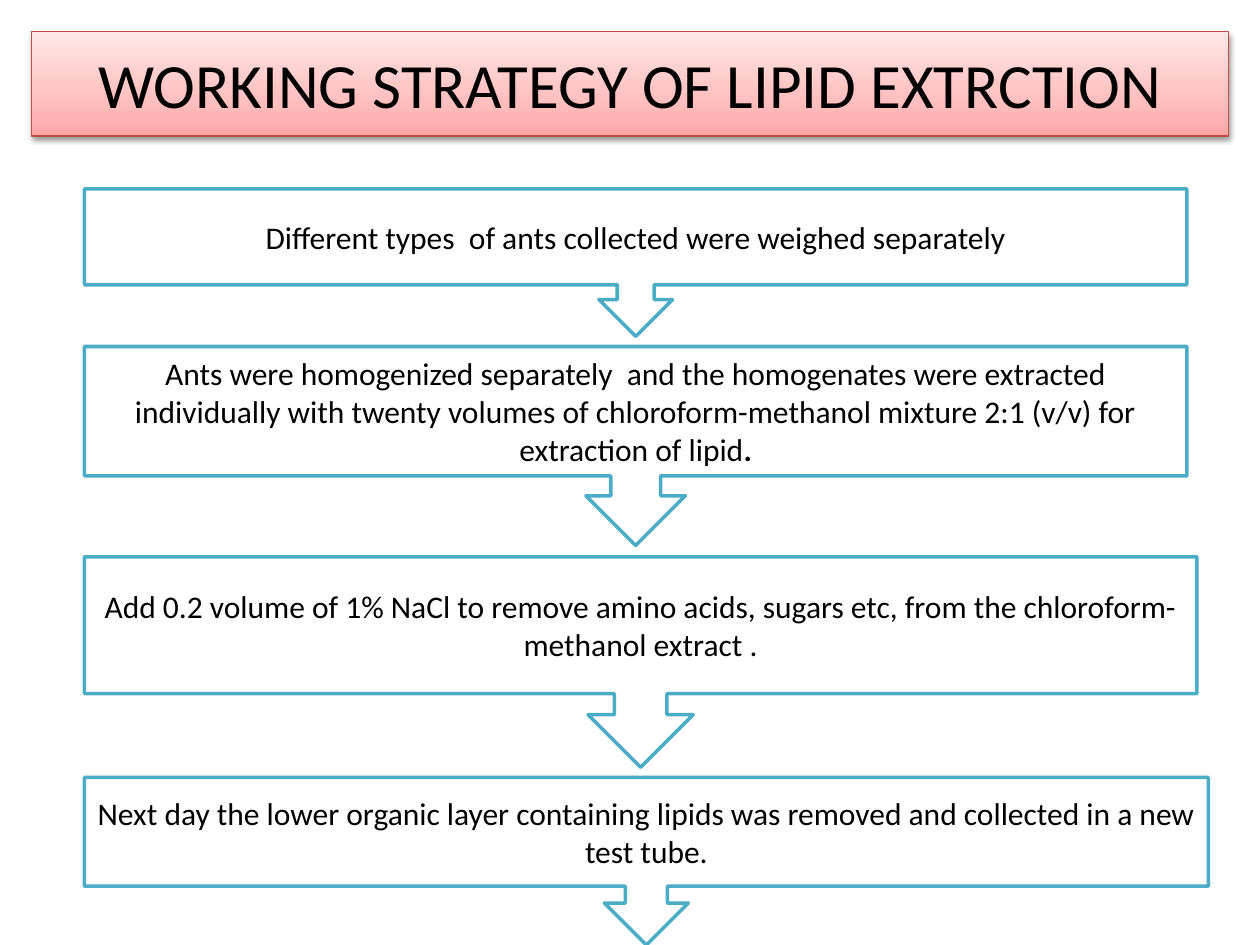
from lxml import etree
from pptx import Presentation
from pptx.dml.color import RGBColor
from pptx.enum import shapes, text
from pptx.oxml import ns
from pptx.util import Inches, Pt

COLORS = {
    "text": "000000", "box": "FFFFFF", "box_line": "4BACC6",
    "title_line": "BF4C48", "shadow": "000000",
    "title_bottom": "FFA6A5", "title_middle": "FFC0BF", "title_top": "FFE7E7",
}


def color(name):
    return RGBColor.from_string(COLORS[name])


def write_text(shape, runs, size):
    """Fill a shape with one centred paragraph of (words, bold) runs."""
    frame = shape.text_frame
    frame_format = {
        "word_wrap": True,
        "auto_size": text.MSO_AUTO_SIZE.NONE,
        "vertical_anchor": text.MSO_ANCHOR.MIDDLE,
    }
    for name, value in frame_format.items():
        setattr(frame, name, value)
    paragraph = frame.paragraphs[0]
    paragraph.alignment = text.PP_ALIGN.CENTER
    for words, bold in runs:
        run = paragraph.add_run()
        run.text = words
        for name, value in {"name": "Calibri", "size": Pt(size), "bold": bold}.items():
            setattr(run.font, name, value)
        run.font.color.rgb = color("text")


presentation = Presentation()
presentation.slide_width, presentation.slide_height = Inches(10), Inches(7.5)
slide = presentation.slides.add_slide(presentation.slide_layouts[5])

# Title banner
title = slide.shapes.title
position = {"left": 0.25, "top": 0.25, "width": 9.5, "height": 0.83}
for name, value in position.items():
    setattr(title, name, Inches(value))
write_text(title, [("WORKING STRATEGY OF LIPID EXTRCTION", False)], 36)
title.line.color.rgb = color("title_line")
title.line.width = Pt(0.75)

# Three-stop gradient running upwards, and a soft shadow below the banner
stops = "".join(
    f'<a:gs pos="{percent * 1000}"><a:srgbClr val="{COLORS[name]}"/></a:gs>'
    for percent, name in [(0, "title_bottom"), (35, "title_middle"), (100, "title_top")]
)
gradient = etree.fromstring(
    f'<a:gradFill {ns.nsdecls("a")} rotWithShape="1"><a:gsLst>{stops}</a:gsLst>'
    '<a:lin ang="16200000" scaled="0"/></a:gradFill>'
)
effects = etree.fromstring(
    f'<a:effectLst {ns.nsdecls("a")}>'
    f'<a:outerShdw blurRad="{Pt(3.1)}" dist="{Pt(1.6)}" dir="5400000" rotWithShape="0">'
    f'<a:srgbClr val="{COLORS["shadow"]}"><a:alpha val="38000"/></a:srgbClr>'
    "</a:outerShdw></a:effectLst>"
)
outline = title.element.spPr.find(ns.qn("a:ln"))
outline.addprevious(gradient)
outline.addnext(effects)

# Steps of the extraction: top, width, height, runs
steps = [
    (1.5, 8.75, 1.17, [
        ("Different types  of ants collected were weighed separately", False)]),
    (2.75, 8.75, 1.58, [
        ("Ants were homogenized separately  and the homogenates were extracted "
         "individually with twenty volumes of chloroform-methanol mixture 2:1 (v/v) "
         "for extraction of lipid", False),
        (".", True)]),
    (4.42, 8.83, 1.67, [
        ("Add 0.2 volume of 1% NaCl to remove amino acids, sugars etc, from the "
         "chloroform-methanol extract .", False)]),
    (6.17, 8.92, 1.33, [
        ("Next day the lower organic layer containing lipids was removed and "
         "collected in a new test tube.", False)]),
]
for top, width, height, runs in steps:
    callout = slide.shapes.add_shape(
        shapes.MSO_SHAPE.DOWN_ARROW_CALLOUT,
        Inches(0.67), Inches(top), Inches(width), Inches(height),
    )
    callout.shadow.inherit = False
    callout.fill.solid()
    callout.fill.fore_color.rgb = color("box")
    callout.line.color.rgb = color("box_line")
    callout.line.width = Pt(2)
    write_text(callout, runs, 18)

presentation.save("out.pptx")
